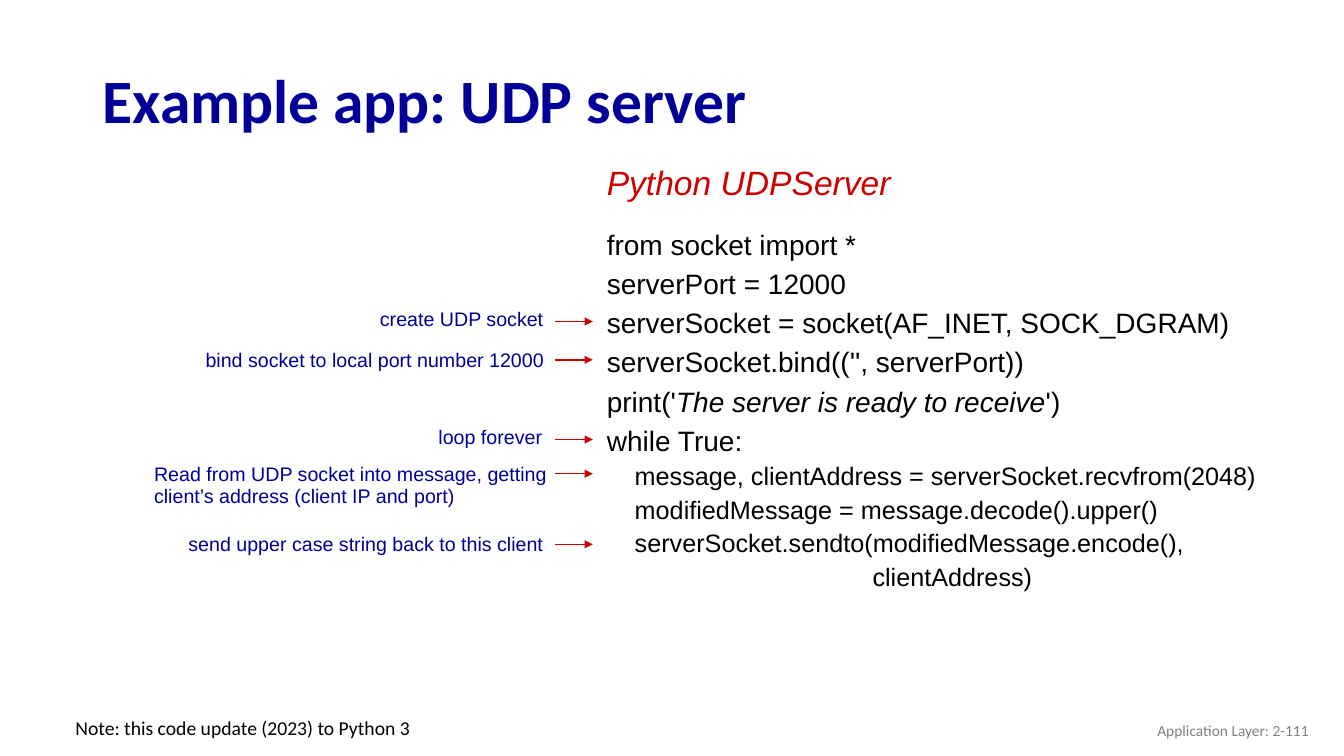
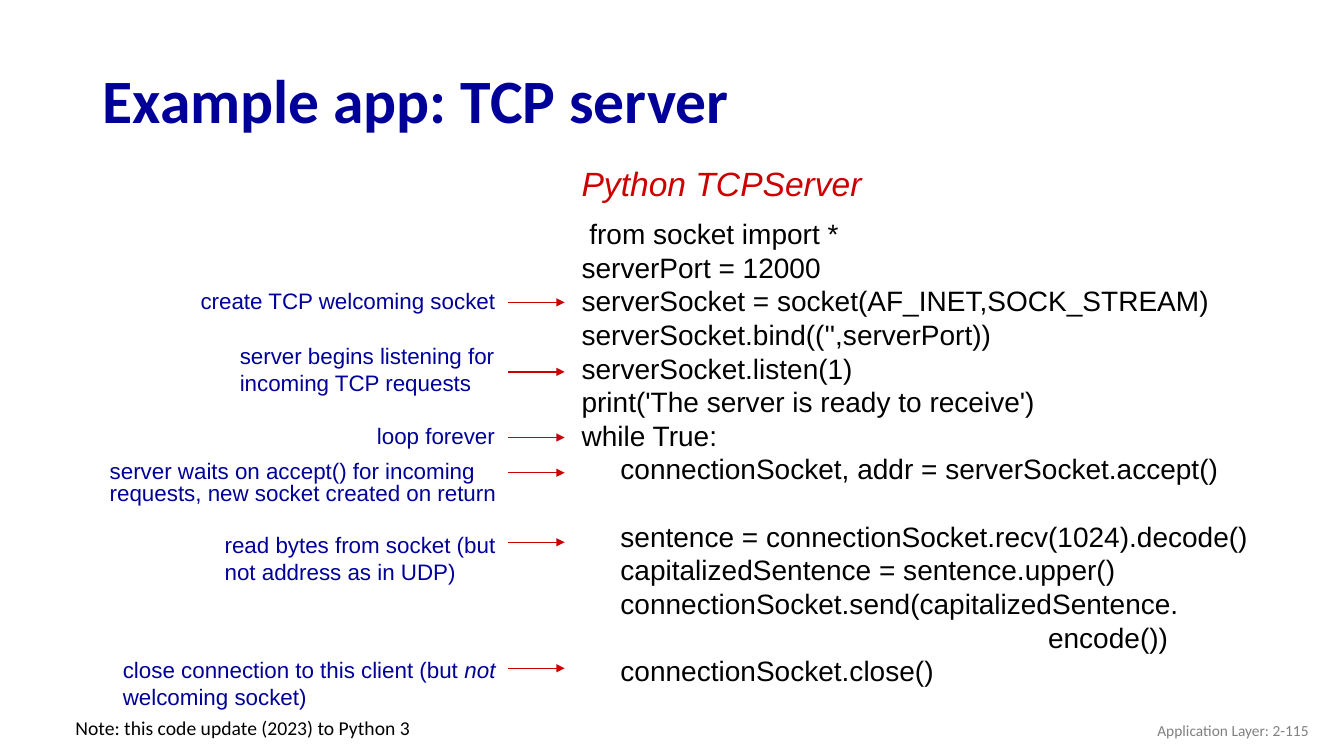
from lxml.etree import SubElement
from pptx import Presentation
from pptx.dml.color import RGBColor
from pptx.enum.shapes import MSO_CONNECTOR
from pptx.enum.text import MSO_ANCHOR, PP_ALIGN
from pptx.oxml.ns import qn
from pptx.util import Inches, Pt

NAVY = RGBColor(0x00, 0x00, 0x99)
RED = RGBColor(0xCC, 0x00, 0x00)
BLACK = RGBColor(0x00, 0x00, 0x00)
GRAY = RGBColor(0x80, 0x80, 0x80)
HEADING_FONT = "Calibri"
BODY_FONT = "Arial"
ITALIC_MARK = "|"

UDP_CODE = [
    "from socket import *",
    "serverPort = 12000",
    "serverSocket = socket(AF_INET, SOCK_DGRAM)",
    "serverSocket.bind(('', serverPort))",
    "print('|The server is ready to receive|')",
    "while True:",
]
UDP_LOOP = [
    "    message, clientAddress = serverSocket.recvfrom(2048)",
    "    modifiedMessage = message.decode().upper()",
    "    serverSocket.sendto(modifiedMessage.encode(),",
    "                                      clientAddress)",
]
UDP_CALLOUTS = [
    ("create UDP socket", 3.67, 3, 2.8, 3.19, None),
    ("bind socket to local port number 12000", 1.94, 3.4, 3.94, 3.57, None),
    ("loop forever", 4.25, 4.18, 1.31, 4.36, 16),
    ("Read from UDP socket into message, getting client’s address (client IP and port)",
     1.43, 4.54, 4.2, 4.7, 16),
    ("send upper case string back to this client", 1.77, 5.23, 4.2, 5.4, None),
]

TCP_CODE = [
    " from socket import *",
    "serverPort = 12000",
    "serverSocket = socket(AF_INET,SOCK_STREAM)",
    "serverSocket.bind(('',serverPort))",
    "serverSocket.listen(1)",
    "print('The server is ready to receive')",
    "while True:",
    "     connectionSocket, addr = serverSocket.accept()",
]
TCP_REPLY = [
    "     sentence = connectionSocket.recv(1024).decode()",
    "     capitalizedSentence = sentence.upper()",
    "     connectionSocket.send(capitalizedSentence.",
    "                                                            encode())",
    "     connectionSocket.close()",
]
TCP_CALLOUTS = [
    ("create TCP welcoming socket", 1.89, 2.8, 3.35, 3, None),
    ("server begins listening for incoming TCP requests", 2.28, 3.35, 3.14, 3.69, None),
    ("loop forever", 3.64, 4.18, 2.03, 4.34, 16),
    ("server waits on accept() for incoming requests, new socket created on return",
     0.99, 4.53, 4.67, 4.69, 16),
    ("read bytes from socket (but not address as in UDP)", 2.13, 5.22, 3, 5.38, None),
    ("close connection to this client (but |not| welcoming socket)",
     1.12, 6.46, 4.27, 6.63, None),
]


class Deck:
    def __init__(self):
        self.presentation = Presentation()
        self.presentation.slide_width = Inches(13.33)
        self.presentation.slide_height = Inches(7.5)
        self.slide = None

    def new_slide(self, title, number):
        self.slide = self.presentation.slides.add_slide(self.presentation.slide_layouts[6])
        self.text(title, (0.92, 0.49, 11.5, 0.98), 44, NAVY, HEADING_FONT,
                  bold=True, anchor=MSO_ANCHOR.MIDDLE)
        self.text(f"Application Layer: 2-{number}", (10.08, 7.05, 3, 0.4), 11, GRAY,
                  HEADING_FONT, anchor=MSO_ANCHOR.MIDDLE, align=PP_ALIGN.RIGHT)
        self.text("Note: this code update (2023) to Python 3", (0.65, 7.05, 3.8, 0.34),
                  14, BLACK, HEADING_FONT)

    def text_frame(self, box, anchor=MSO_ANCHOR.TOP, shapes=None):
        shapes = shapes or self.slide.shapes
        frame = shapes.add_textbox(*map(Inches, box)).text_frame
        frame.word_wrap = True
        frame.vertical_anchor = anchor
        return frame

    def fill_paragraph(self, paragraph, text, size, color, font=BODY_FONT,
                       bold=False, italic=False, leading=None):
        if leading:
            paragraph.line_spacing = Pt(leading)
        for index, part in enumerate(text.split(ITALIC_MARK)):
            run = paragraph.add_run()
            run.text = part
            run.font.name = font
            run.font.size = Pt(size)
            run.font.bold = bold
            run.font.italic = italic or index % 2 == 1
            run.font.color.rgb = color

    def text(self, text, box, size, color, font=BODY_FONT, anchor=MSO_ANCHOR.TOP,
             align=PP_ALIGN.LEFT, shapes=None, **style):
        paragraph = self.text_frame(box, anchor, shapes).paragraphs[0]
        paragraph.alignment = align
        self.fill_paragraph(paragraph, text, size, color, font, **style)

    def code_heading(self, text, left, top):
        self.text(text, (left, top, 3.5, 0.5), 24, RED, italic=True)

    def code(self, box, blocks, gap=0):
        frame = self.text_frame(box)
        paragraph = None
        for lines, size, leading in blocks:
            for index, line in enumerate(lines):
                starts_block = paragraph is not None and index == 0
                paragraph = frame.add_paragraph() if paragraph else frame.paragraphs[0]
                if starts_block and gap:
                    paragraph.space_before = Pt(gap)
                self.fill_paragraph(paragraph, line, size, BLACK, leading=leading)

    def arrow(self, shapes, start, end, y):
        connector = shapes.add_connector(MSO_CONNECTOR.STRAIGHT, Inches(start), Inches(y),
                                         Inches(end), Inches(y))
        connector.line.color.rgb = RED
        connector.line.width = Pt(1)
        properties = connector.element.spPr
        SubElement(properties.find(qn("a:ln")), qn("a:tailEnd"), type="triangle")
        SubElement(properties, qn("a:effectLst"))

    def callouts(self, callouts, size, arrow_start, arrow_end):
        for text, left, top, width, arrow_y, leading in callouts:
            shapes = self.slide.shapes.add_group_shape().shapes
            self.text(text, (left, top, width, 0.34), size, NAVY,
                      shapes=shapes, leading=leading)
            self.arrow(shapes, arrow_start, arrow_end, arrow_y)


def main():
    deck = Deck()

    deck.new_slide("Example app: UDP server", 111)
    deck.code_heading("Python UDPServer", 5.92, 1.56)
    deck.code((5.92, 2.15, 7.2, 3.78), [(UDP_CODE, 20, 28), (UDP_LOOP, 18, 24)])
    deck.callouts(UDP_CALLOUTS, 14, 5.5, 5.88)

    deck.new_slide("Example app: TCP server", 115)
    deck.code_heading("Python TCPServer", 5.67, 1.57)
    deck.code((5.67, 2.1, 7.4, 4.81), [(TCP_CODE, 20, None), (TCP_REPLY, 20, None)], gap=24)
    deck.callouts(TCP_CALLOUTS, 16, 5.04, 5.6)

    deck.presentation.save("out.pptx")


if __name__ == "__main__":
    main()
